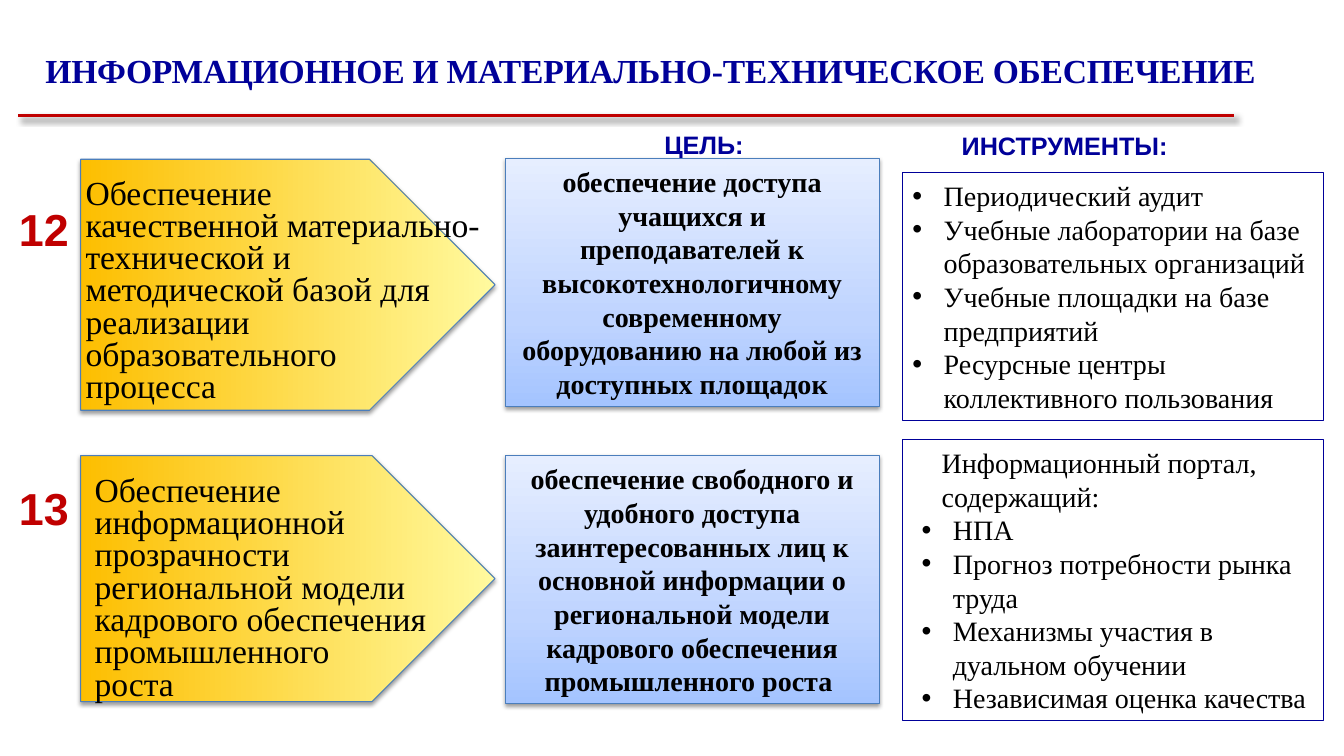
import copy

import pptx
import pptx.dml.color
import pptx.enum.dml
import pptx.enum.shapes
import pptx.enum.text
import pptx.oxml
import pptx.oxml.ns
import pptx.util

Inches, Pt = pptx.util.Inches, pptx.util.Pt
RGBColor = pptx.dml.color.RGBColor
Align = pptx.enum.text.PP_ALIGN
Anchor = pptx.enum.text.MSO_ANCHOR
Shape = pptx.enum.shapes.MSO_SHAPE
qn = pptx.oxml.ns.qn

NAVY = RGBColor(0x00, 0x00, 0x99)
RED = RGBColor(0xC0, 0x00, 0x00)
BLACK = RGBColor(0x00, 0x00, 0x00)
STEEL = RGBColor(0x4B, 0x7E, 0xBC)
GOLD = [(0, RGBColor(0xFD, 0xBE, 0x00)), (1, RGBColor(0xFF, 0xFA, 0x9F))]
SKY = [(0, RGBColor(0xA4, 0xC4, 0xFF)), (0.35, RGBColor(0xBF, 0xD4, 0xFF)),
       (1, RGBColor(0xE6, 0xEE, 0xFF))]
SERIF, SANS = "Times New Roman", "Arial"

# Columns as (left, width) in inches
NUMBER_COLUMN = (0.09, 0.74)
ARROW_COLUMN = (0.8, 4.11)
GOAL_COLUMN = (5.01, 3.71)
TOOLS_COLUMN = (8.95, 4.18)

# Rows: vertical places as (top, height); tools as (text, has bullet)
ROWS = [
    {"number": "12", "number_top": 1.95,
     "arrow": (1.58, 2.49), "task_box": (0.75, 1.73, 4.25, 2.3),
     "task": ["Обеспечение",
              "качественной материально-технической и методической базой для "
              "реализации образовательного",
              "процесса"],
     "goal_box": (1.57, 2.46),
     "goal": "обеспечение доступа учащихся и преподавателей к высокотехнологичному "
             "современному оборудованию на любой из доступных площадок",
     "tools_box": (1.71, 2.46), "tools_indent": 0.31,
     "tools": [("Периодический аудит", True),
               ("Учебные лаборатории на базе образовательных организаций", True),
               ("Учебные площадки на базе предприятий", True),
               ("Ресурсные центры коллективного пользования", True)]},
    {"number": "13", "number_top": 4.72,
     "arrow": (4.52, 2.44), "task_box": (0.84, 4.68, 3.57, 2.3),
     "task": ["Обеспечение информационной прозрачности региональной модели "
              "кадрового обеспечения промышленного \nроста"],
     "goal_box": (4.52, 2.46),
     "goal": "обеспечение свободного и удобного доступа заинтересованных лиц к "
             "основной информации о региональной модели кадрового обеспечения "
             "промышленного роста ",
     "tools_box": (4.36, 2.79), "tools_indent": 0.4,
     "tools": [("Информационный портал, содержащий:", False),
               ("НПА", True),
               ("Прогноз потребности рынка труда", True),
               ("Механизмы участия в дуальном обучении", True),
               ("Независимая оценка качества", True)]},
]


def column_box(column, row):
    return column[0], row[0], column[1], row[1]


def place(shape, box):
    shape.left, shape.top, shape.width, shape.height = map(Inches, box)


def write(shape, texts, size, color, font=SERIF, bold=False, align=Align.LEFT,
          anchor=Anchor.TOP, spacing=None):
    """Fill a shape with one paragraph per text; a newline is a line break."""
    frame = shape.text_frame
    frame.word_wrap = True
    frame.auto_size = pptx.enum.text.MSO_AUTO_SIZE.NONE
    frame.vertical_anchor = anchor
    for index, text in enumerate(texts):
        paragraph = frame.add_paragraph() if index else frame.paragraphs[0]
        paragraph.alignment = align
        paragraph.space_before = Pt(0)
        if spacing:
            paragraph.line_spacing = spacing
        for part, line in enumerate(text.split("\n")):
            if part:
                paragraph.add_line_break()
            run = paragraph.add_run()
            run.text = line
            run.font.size, run.font.name, run.font.bold = Pt(size), font, bold
            run.font.color.rgb = color
    return frame


def add_text(slide, box, texts, size, color, **style):
    text_box = slide.shapes.add_textbox(*map(Inches, box))
    write(text_box, texts, size, color, **style)


def add_shadow(shape, alpha, blur, distance, angle):
    properties = shape._element.spPr
    for effects in properties.findall(qn("a:effectLst")):
        properties.remove(effects)
    properties.append(pptx.oxml.parse_xml(
        f'<a:effectLst {pptx.oxml.ns.nsdecls("a")}>'
        f'<a:outerShdw blurRad="{Pt(blur)}" dist="{Pt(distance)}" '
        f'dir="{angle * 60000}" rotWithShape="0">'
        f'<a:srgbClr val="000000"><a:alpha val="{alpha * 1000}"/></a:srgbClr>'
        '</a:outerShdw></a:effectLst>'))


def add_gradient_shape(slide, kind, box, stops, angle):
    shape = slide.shapes.add_shape(kind, *map(Inches, box))
    shape.fill.gradient()
    shape.fill.gradient_angle = angle
    stop_list = shape._element.spPr.find(".//" + qn("a:gsLst"))
    while len(stop_list) < len(stops):
        stop_list.append(copy.deepcopy(stop_list[0]))
    for stop, (position, color) in zip(shape.fill.gradient_stops, stops):
        stop.position = position
        stop.color.rgb = color
    shape.line.color.rgb = STEEL
    shape.line.width = Pt(0.75)
    add_shadow(shape, 38, 3.1, 1.6, 90)
    return shape


def add_header(slide, box):
    """Title, the red rule below it and the two column headings."""
    left, top, width, height = box
    title = slide.shapes.title
    place(title, box)
    frame = write(title, ["ИНФОРМАЦИОННОЕ И МАТЕРИАЛЬНО-ТЕХНИЧЕСКОЕ ОБЕСПЕЧЕНИЕ"], 24,
                  NAVY, bold=True, align=Align.CENTER, anchor=Anchor.MIDDLE)
    frame.paragraphs[0].runs[0].font._element.set("spc", "-20")

    rule_top = Inches(top + 0.71)
    rule = slide.shapes.add_connector(
        pptx.enum.shapes.MSO_CONNECTOR.STRAIGHT,
        Inches(left), rule_top, Inches(left + width - 0.48), rule_top)
    rule.line.color.rgb = RED
    rule.line.width = Pt(2.25)
    add_shadow(rule, 40, 4, 3, 45)

    for heading, x, y in (("ЦЕЛЬ:", 6.49, 1.23), ("ИНСТРУМЕНТЫ:", 9.44, 1.24)):
        add_text(slide, (x, y, 3.57, 0.4), [heading], 18, NAVY, font=SANS, bold=True)


def add_tools(placeholder, box, tools, indent):
    """Framed list of instruments in a body placeholder."""
    place(placeholder, box)
    placeholder.line.color.rgb = NAVY
    placeholder.line.width = Pt(0.75)
    frame = write(placeholder, [text for text, _ in tools], 20, BLACK,
                  anchor=Anchor.MIDDLE)
    for paragraph, (_, has_bullet) in zip(frame.paragraphs, tools):
        properties = paragraph._p.get_or_add_pPr()
        properties.set("marL", str(Inches(indent if has_bullet else 0.29)))
        properties.set("indent", str(Inches(-0.31 if has_bullet else 0)))
        if not has_bullet:
            properties.append(pptx.oxml.parse_xml(
                f'<a:buNone {pptx.oxml.ns.nsdecls("a")}/>'))


def add_row(slide, row, placeholder):
    """Number, task arrow, goal and instruments."""
    add_text(slide, column_box(NUMBER_COLUMN, (row["number_top"], 0.64)),
             [row["number"]], 32, RED, font=SANS, bold=True)
    add_gradient_shape(slide, Shape.PENTAGON,
                       column_box(ARROW_COLUMN, row["arrow"]), GOLD, 0)
    add_text(slide, row["task_box"], row["task"], 24, BLACK, spacing=0.8)
    goal = add_gradient_shape(slide, Shape.RECTANGLE,
                              column_box(GOAL_COLUMN, row["goal_box"]), SKY, 90)
    write(goal, [row["goal"]], 20, BLACK, bold=True, align=Align.CENTER,
          anchor=Anchor.MIDDLE)
    add_tools(placeholder, column_box(TOOLS_COLUMN, row["tools_box"]),
              row["tools"], row["tools_indent"])


def main():
    presentation = pptx.Presentation()
    presentation.slide_width, presentation.slide_height = Inches(13.33), Inches(7.5)
    # Layout with a title and two body placeholders
    slide = presentation.slides.add_slide(presentation.slide_layouts[3])
    add_header(slide, (0.18, 0.44, 12.54, 0.5))
    for index, row in enumerate(ROWS, start=1):
        add_row(slide, row, slide.placeholders[index])
    presentation.save("out.pptx")


if __name__ == "__main__":
    main()
